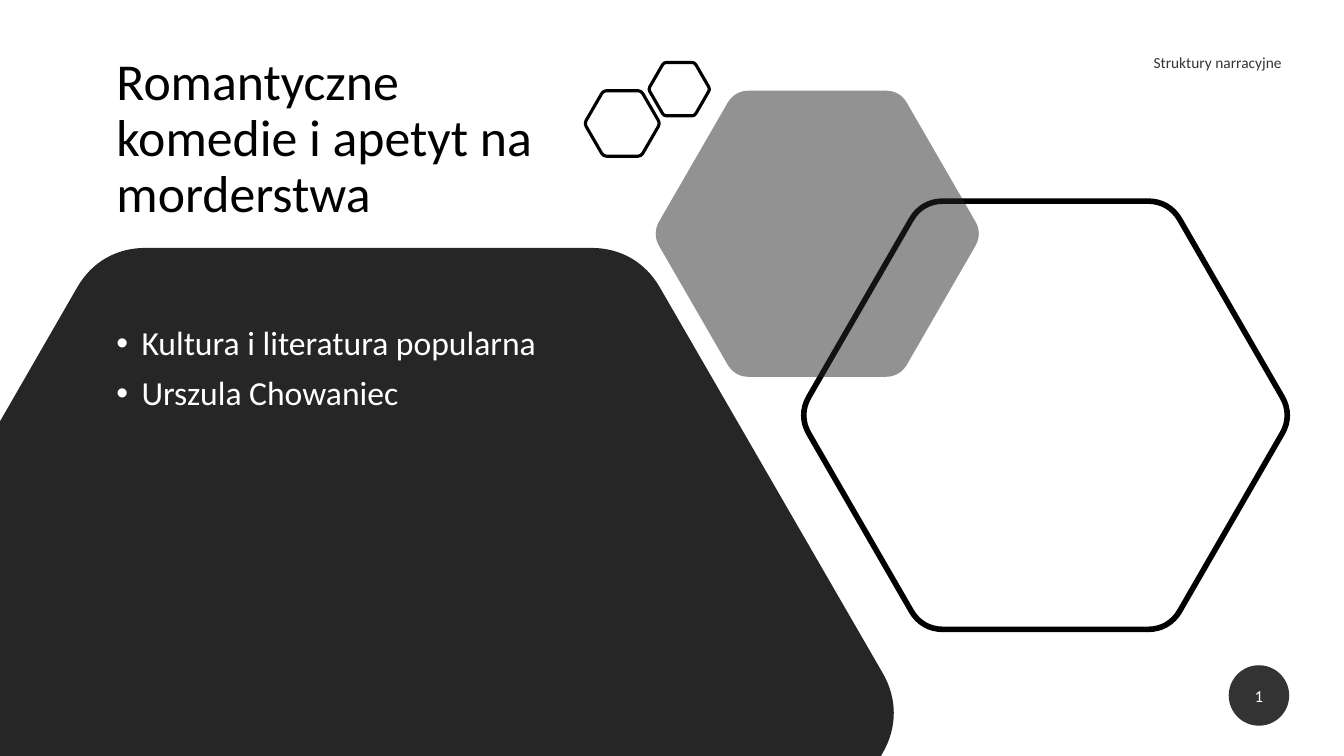
from math import cos, sin, radians, dist
from lxml.etree import SubElement
from pptx import Presentation
from pptx.dml.color import RGBColor
from pptx.enum.shapes import MSO_SHAPE
from pptx.enum.text import MSO_ANCHOR, MSO_AUTO_SIZE, PP_ALIGN
from pptx.oxml.ns import qn
from pptx.util import Pt


def paint(fill, color, alpha=100):
    fill.solid()
    fill.fore_color.rgb = RGBColor.from_string(color)
    if alpha < 100:
        tone = next(fill._xPr.iter(qn("a:srgbClr")))
        SubElement(tone, qn("a:alpha"), val=str(alpha * 1000))


def write(shape, text, size, color="000000", alpha=100, align=PP_ALIGN.LEFT,
          anchor=MSO_ANCHOR.MIDDLE, line=1.0, before=0, after=0, bullet=None):
    """Fill the shape with one paragraph per line of text."""
    frame = shape.text_frame
    frame.text = text
    frame.word_wrap = True
    frame.auto_size = MSO_AUTO_SIZE.NONE
    frame.vertical_anchor = anchor
    for para in frame.paragraphs:
        para.alignment = align
        para.line_spacing = line
        para.space_before = Pt(before)
        para.space_after = Pt(after)
        font = para.runs[0].font
        font.name = "Calibri"
        font.size = Pt(size)
        paint(font.fill, color, alpha)
        if bullet:
            props = para._p.get_or_add_pPr()
            props.set("marL", str(Pt(18)))
            props.set("indent", str(-Pt(18)))
            SubElement(props, qn("a:buFont"), typeface="Arial")
            SubElement(props, qn("a:buChar"), char=bullet)


deck = Presentation()
deck.slide_width, deck.slide_height = Pt(960), Pt(540)
slide = deck.slides.add_slide(deck.slide_layouts[5])
shapes = slide.shapes

title = shapes.title
title.left, title.top, title.width, title.height = Pt(76), Pt(35.3), Pt(337), Pt(129.6)
write(title, "Romantyczne komedie i apetyt na morderstwa", 37, line=0.9)

# Each outline: corners as (x, y, rounding length), fill, fill opacity, line width
panel = [(0, 301, 0), (71.4, 177.1, 32.5), (455, 177.1, 32.5),
         (646.8, 509, 32.5), (629.3, 540, 0), (0, 540, 0)]
outlines = [(panel, "262626", 100, 0)]
for x, y, radius, color, alpha, width in [
    (746.8, 296.6, 176.6, None, 100, 4),
    (583.8, 167, 118, "262626", 50, 0),
    (444.5, 88.2, 27, None, 100, 2.25),
    (485.2, 63.7, 22, None, 100, 2.25),
]:
    corners = [(x + radius * cos(radians(a)), y + radius * sin(radians(a)), radius * 0.085)
               for a in range(0, 360, 60)]
    outlines.append((corners, color, alpha, width))

PULL = 0.64  # how far the curve handles reach towards the sharp corner
for corners, color, alpha, width in outlines:
    points, bends = [], []
    for i, (x, y, cut) in enumerate(corners):
        if not cut:
            points.append((Pt(x), Pt(y)))
            continue
        bends.append(len(points))
        last, after = corners[i - 1], corners[(i + 1) % len(corners)]
        for near, reach in [(last, 1), (last, 1 - PULL), (after, 1 - PULL), (after, 1)]:
            part = reach * cut / dist((x, y), near[:2])
            points.append((Pt(x + (near[0] - x) * part), Pt(y + (near[1] - y) * part)))
    pen = shapes.build_freeform(*points[0])
    pen.add_line_segments(points[1:], close=True)
    shape = pen.convert_to_shape()
    # Turn the three segments at each rounded corner into one curve
    lines = list(shape._element.iter(qn("a:lnTo")))
    for start in bends:
        curve, *rest = lines[start:start + 3]
        curve.tag = qn("a:cubicBezTo")
        for step in rest:
            curve.append(step[0])
            curve.getparent().remove(step)
    shape.shadow.inherit = False
    if color:
        paint(shape.fill, color, alpha)
    else:
        shape.fill.background()
    if width:
        paint(shape.line.fill, "000000")
        shape.line.width = Pt(width)
    else:
        shape.line.fill.background()

topic = shapes.add_textbox(Pt(620), Pt(30.2), Pt(305.3), Pt(28.8))
write(topic, "Struktury narracyjne ", 11, alpha=80, align=PP_ALIGN.RIGHT, after=6)

body = shapes.add_textbox(Pt(76), Pt(229.7), Pt(373.7), Pt(243.4))
write(body, "Kultura i literatura popularna\nUrszula Chowaniec", 24, color="FFFFFF",
      anchor=MSO_ANCHOR.TOP, line=0.9, before=10, bullet="•")

badge = shapes.add_shape(MSO_SHAPE.OVAL, Pt(877.7), Pt(475.2), Pt(43.2), Pt(43.2))
badge.shadow.inherit = False
paint(badge.fill, "000000", 80)
badge.line.fill.background()
write(badge, "1", 12, color="FFFFFF", align=PP_ALIGN.CENTER, after=6)

deck.save("out.pptx")
